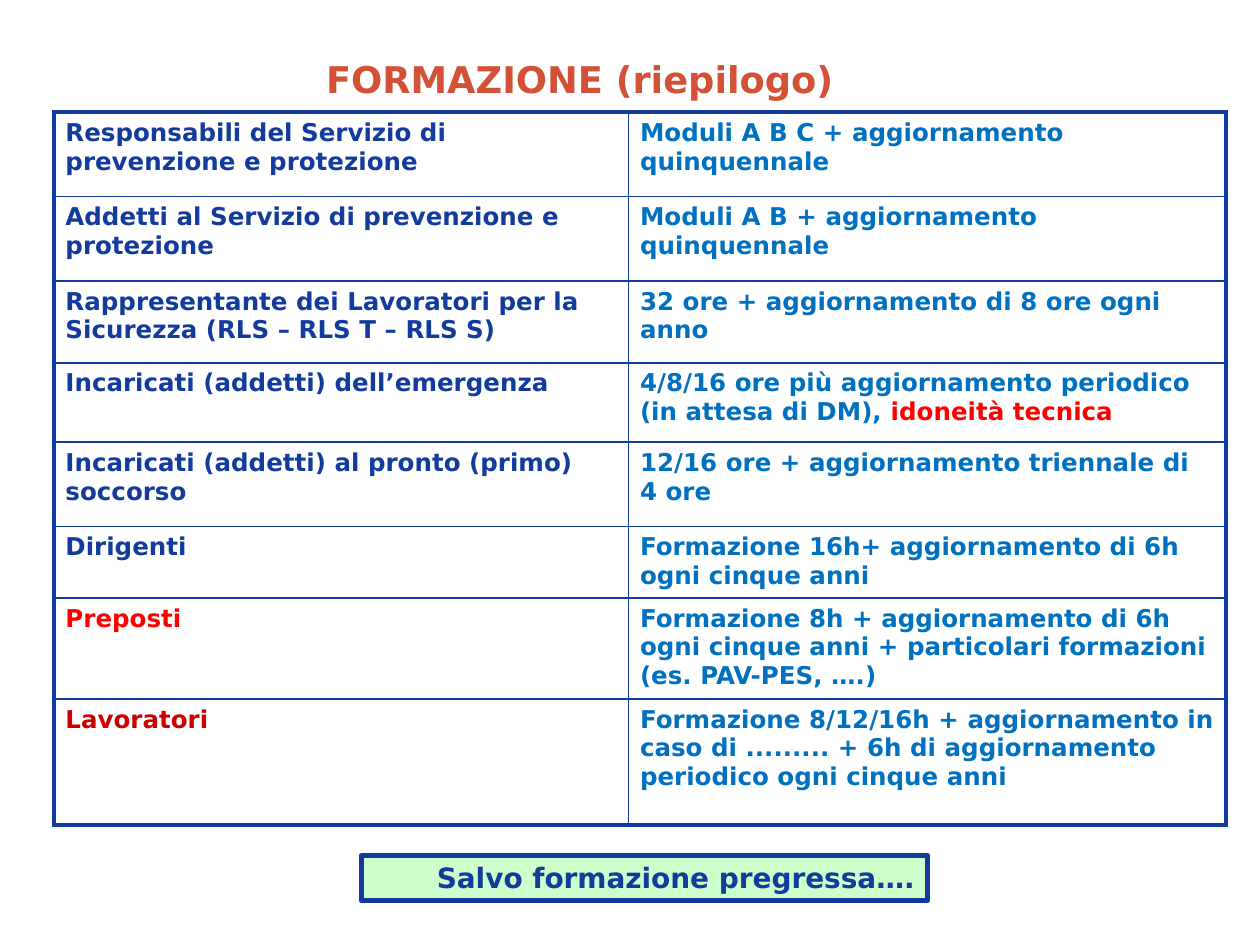
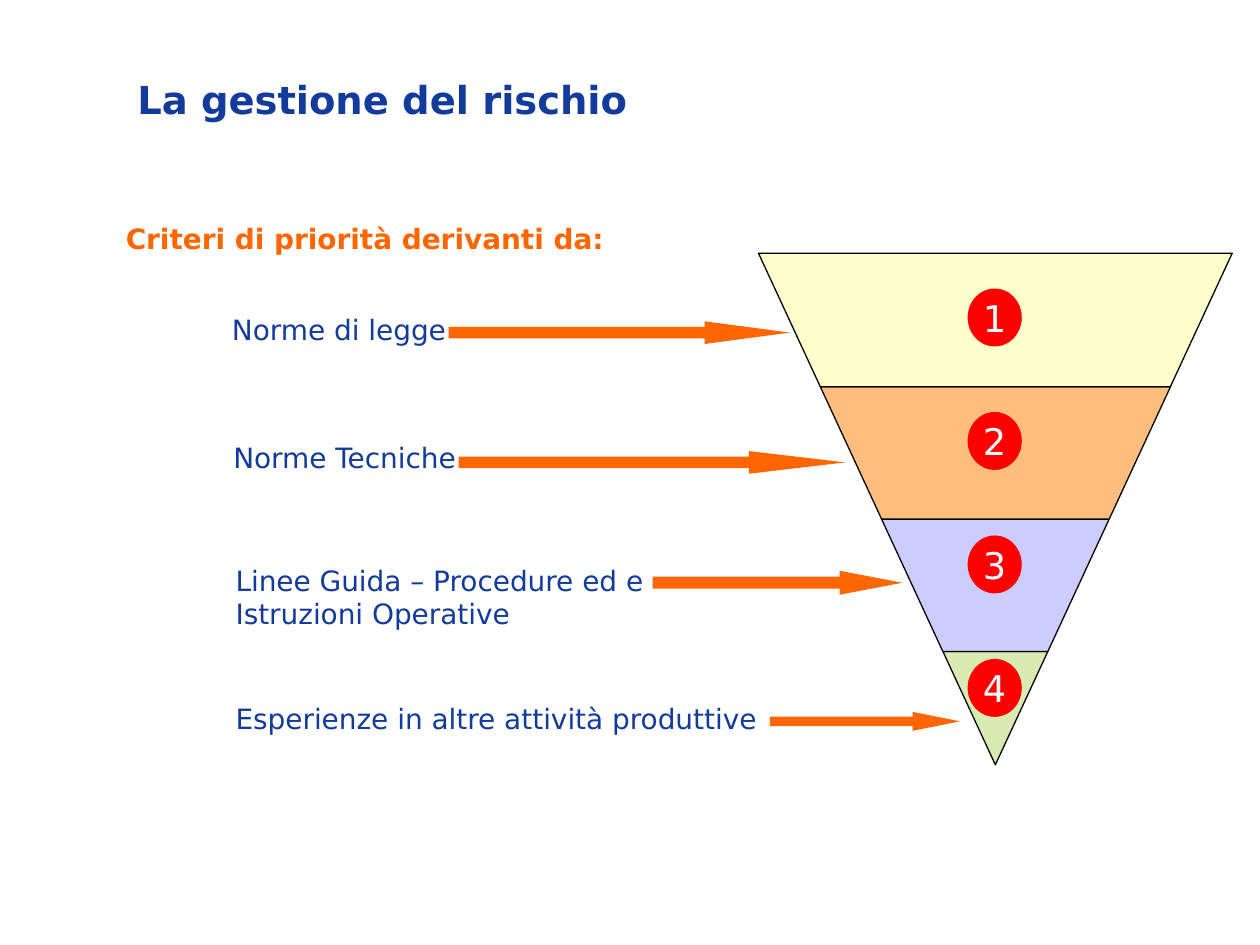
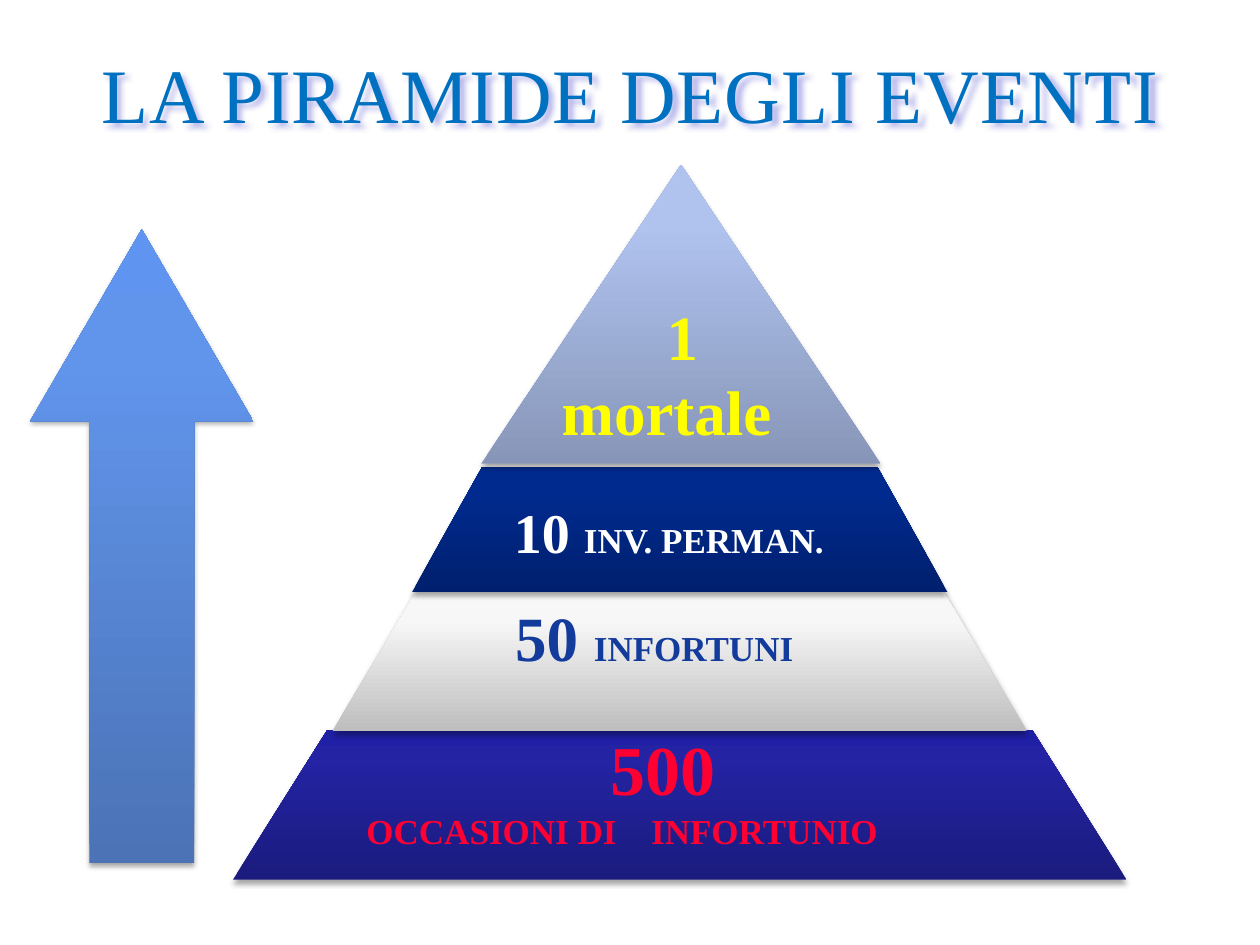
from dataclasses import dataclass
from typing import NamedTuple

from lxml.etree import SubElement
from pptx import Presentation
from pptx.dml.color import RGBColor
from pptx.enum.shapes import MSO_SHAPE
from pptx.enum.text import MSO_ANCHOR, PP_ALIGN
from pptx.oxml.ns import qn
from pptx.util import Emu, Pt

PX = 9144  # 100 px to the inch
SANS, SERIF = "DejaVu Sans", "Times New Roman"
NAVY, SKY, ORANGE = "133B9C", "0070C0", "FF6600"
RED, DARK_RED, WHITE, BLACK = "FF0000", "CC0000", "FFFFFF", "000000"
LEFT, CENTER = PP_ALIGN.LEFT, PP_ALIGN.CENTER
TOP, MIDDLE, BOTTOM = MSO_ANCHOR.TOP, MSO_ANCHOR.MIDDLE, MSO_ANCHOR.BOTTOM


class Box(NamedTuple):
    left: int
    top: int
    width: int
    height: int


class Insets(NamedTuple):
    left: int
    top: int
    right: int
    bottom: int


WIDE = Insets(10, 5, 10, 5)
SNUG = Insets(9, 4, 9, 4)
LABEL = Insets(6, 6, 10, 6)
BADGE = Insets(6, 6, 6, 6)


class Run(NamedTuple):
    """Text with what differs from the rest of its line."""
    text: str
    size: int | None = None
    color: str | None = None


@dataclass(frozen=True)
class Line:
    runs: str | tuple[Run, ...]
    size: int
    color: str = NAVY
    bold: bool = False
    font: str = SANS
    align: PP_ALIGN = LEFT
    indent: int = 0
    tab: int = 0


class Duty(NamedTuple):
    role: str
    training: str | tuple[Run, ...]
    height: int
    role_color: str = NAVY


class Priority(NamedTuple):
    label: str
    label_box: Box
    wraps: bool
    arrow: Box
    band_color: str


class Tier(NamedTuple):
    box: Box
    adjustments: tuple[float, ...]
    gradient: tuple[str, str, str]
    shape: MSO_SHAPE = MSO_SHAPE.TRAPEZOID


DUTIES = (
    Duty("Responsabili del Servizio di prevenzione e protezione",
         "Moduli A B C + aggiornamento quinquennale", 67),
    Duty("Addetti al Servizio di prevenzione e protezione",
         "Moduli A B + aggiornamento quinquennale", 67),
    Duty("Rappresentante dei Lavoratori per la Sicurezza (RLS – RLS T – RLS S)",
         "32 ore + aggiornamento di 8 ore ogni anno", 65),
    Duty("Incaricati (addetti) dell’emergenza",
         (Run("4/8/16 ore più aggiornamento periodico (in attesa di DM), "),
          Run("idoneità tecnica", color=RED)), 63),
    Duty("Incaricati (addetti) al pronto (primo) soccorso",
         "12/16 ore + aggiornamento triennale di 4 ore", 67),
    Duty("Dirigenti", "Formazione 16h+ aggiornamento di 6h ogni cinque anni", 51),
    Duty("Preposti",
         "Formazione 8h + aggiornamento di 6h ogni cinque anni"
         " + particolari formazioni (es. PAV-PES, ….)", 51, RED),
    Duty("Lavoratori",
         "Formazione 8/12/16h + aggiornamento in caso di ........."
         " + 6h di aggiornamento periodico ogni cinque anni", 100, DARK_RED),
)

PRIORITIES = (
    Priority("Norme di legge", Box(177, 242, 188, 38), False,
             Box(356, 255, 271, 18), "FFFFCC"),
    Priority("Norme Tecniche", Box(178, 344, 195, 38), False,
             Box(364, 358, 307, 18), "FFBE7D"),
    Priority("Linee Guida – Procedure ed e Istruzioni Operative",
             Box(181, 441, 434, 67), True, Box(518, 453, 198, 19), "CCCCFF"),
    Priority("Esperienze in altre attività produttive",
             Box(181, 551, 434, 39), True, Box(611, 565, 151, 15), "D8EBB3"),
)
BAND_EDGES = (201, 307, 412, 517, 607)
FUNNEL_CENTER, FUNNEL_HALF_WIDTH = 790, 188

TIERS = (
    Tier(Box(185, 579, 709, 119), (0.63,), ("1B1B7E", "2323A3", "2020A6")),
    Tier(Box(264, 470, 551, 110), (0.6,), ("BEBEBE", "F7F7F7", "F8F8F8")),
    Tier(Box(327, 371, 425, 99), (0.56,), ("00206E", "002A8E", "002A8F")),
    Tier(Box(382, 131, 317, 237), (0.67,), ("8796B8", "B0C3EF", "AFC3F1")),
)
RISING_ARROW = Tier(Box(24, 182, 177, 503), (0.47, 0.86),
                    ("4B73B6", "6195EC", "5F95F0"), MSO_SHAPE.UP_ARROW)


def px(length: float) -> Emu:
    return Emu(round(length * PX))


def place(box: Box) -> tuple[Emu, ...]:
    return tuple(px(length) for length in box)


def rgb(color: str) -> RGBColor:
    return RGBColor.from_string(color)


def write(frame, *lines: Line) -> None:
    for number, line in enumerate(lines):
        paragraph = frame.add_paragraph() if number else frame.paragraphs[0]
        paragraph.alignment = line.align
        properties = paragraph._p.get_or_add_pPr()
        if line.indent:
            properties.set("marL", str(px(line.indent)))
            properties.set("indent", "0")
        if line.tab:
            stops = SubElement(properties, qn("a:tabLst"))
            SubElement(stops, qn("a:tab"), pos=str(px(line.tab)), algn="l")
        font = paragraph.font
        font.name, font.size, font.bold = line.font, Pt(line.size), line.bold
        font.color.rgb = rgb(line.color)
        runs = (Run(line.runs),) if isinstance(line.runs, str) else line.runs
        for part in runs:
            run = paragraph.add_run()
            run.text = part.text
            if part.size:
                run.font.size = Pt(part.size)
            if part.color:
                run.font.color.rgb = rgb(part.color)


def fill_frame(shape, *lines: Line, insets: Insets = WIDE,
               anchor: MSO_ANCHOR = TOP, wrap: bool = True) -> None:
    frame = shape.text_frame
    frame.word_wrap, frame.vertical_anchor = wrap, anchor
    (frame.margin_left, frame.margin_top,
     frame.margin_right, frame.margin_bottom) = place(insets)
    write(frame, *lines)


def add_text(slide, box: Box, *lines: Line, **layout):
    shape = slide.shapes.add_textbox(*place(box))
    fill_frame(shape, *lines, **layout)
    return shape


def paint(shape, color: str, line: str | None = None, width: float = 0.75) -> None:
    shape.shadow.inherit = False
    shape.fill.solid()
    shape.fill.fore_color.rgb = rgb(color)
    if line:
        shape.line.color.rgb = rgb(line)
        shape.line.width = Pt(width)
    else:
        shape.line.fill.background()


def add_solid(slide, kind: MSO_SHAPE, box: Box, color: str,
              line: str | None = None, width: float = 0.75):
    shape = slide.shapes.add_shape(kind, *place(box))
    paint(shape, color, line, width)
    return shape


def cast_shadow(shape, color: str, opacity: int, blur: float,
                distance: float, angle: int) -> None:
    shape.shadow.inherit = False
    effects = shape._element.spPr.find(qn("a:effectLst"))
    shadow = SubElement(effects, qn("a:outerShdw"), blurRad=str(Pt(blur)),
                        dist=str(Pt(distance)), dir=str(angle * 60000),
                        algn="ctr", rotWithShape="0")
    tint = SubElement(shadow, qn("a:srgbClr"), val=color)
    SubElement(tint, qn("a:alpha"), val=str(opacity * 1000))


def add_tier(slide, tier: Tier) -> None:
    shape = slide.shapes.add_shape(tier.shape, *place(tier.box))
    for number, value in enumerate(tier.adjustments):
        shape.adjustments[number] = value
    shape.fill.gradient()
    shape.fill.gradient_angle = 90
    stops = shape._element.spPr.find(qn("a:gradFill")).find(qn("a:gsLst"))
    stops.clear()
    for percent, color in zip((0, 80, 100), tier.gradient):
        stop = SubElement(stops, qn("a:gs"), pos=str(percent * 1000))
        SubElement(stop, qn("a:srgbClr"), val=color)
    shape.line.fill.background()
    cast_shadow(shape, BLACK, 35, 3.1, 1.8, 90)


def set_borders(cell, thick_sides: set[str]) -> None:
    properties = cell._tc.get_or_add_tcPr()
    for side in "LRTB":
        width = Pt(2.25 if side in thick_sides else 1)
        line = SubElement(properties, qn(f"a:ln{side}"), w=str(width))
        SubElement(SubElement(line, qn("a:solidFill")), qn("a:srgbClr"), val=NAVY)


def build_training_summary(slide) -> None:
    add_text(slide, Box(0, 13, 925, 72),
             Line("FORMAZIONE (riepilogo)", 21, "D35137", True, align=CENTER),
             insets=Insets(5, 5, 10, 5), anchor=BOTTOM)

    height = sum(duty.height for duty in DUTIES)
    table = slide.shapes.add_table(
        len(DUTIES), 2, *place(Box(43, 89, 930, height))).table
    table.first_row = table.horz_banding = False
    for column, width in zip(table.columns, (456, 474)):
        column.width = px(width)
    for number, duty in enumerate(DUTIES):
        table.rows[number].height = px(duty.height)
        outer = {"T"} if number == 0 else {"B"} if duty is DUTIES[-1] else set()
        entries = ((duty.role, duty.role_color, "L"), (duty.training, SKY, "R"))
        for cell, (text, color, side) in zip(table.rows[number].cells, entries):
            (cell.margin_left, cell.margin_top,
             cell.margin_right, cell.margin_bottom) = place(Insets(9, 5, 9, 5))
            set_borders(cell, outer | {side})
            cell.fill.background()
            write(cell.text_frame, Line(text, 14, color, True))

    exemption = add_solid(slide, MSO_SHAPE.RECTANGLE, Box(287, 679, 449, 36),
                          "CCFFCC", NAVY, 3)
    fill_frame(exemption, Line("Salvo formazione pregressa….", 16, bold=True,
                               align=CENTER, indent=50), insets=SNUG)


def funnel_half_width(y: int) -> float:
    top, tip = BAND_EDGES[0], BAND_EDGES[-1]
    return FUNNEL_HALF_WIDTH * (tip - y) / (tip - top)


def add_band(slide, top: int, bottom: int, color: str) -> None:
    upper, lower = funnel_half_width(top), funnel_half_width(bottom)
    corners = [(upper, top), (lower, bottom), (-lower, bottom)]
    outline = slide.shapes.build_freeform(
        px(FUNNEL_CENTER - upper), px(top), scale=1.0)
    outline.add_line_segments(
        [(px(FUNNEL_CENTER + x), px(y)) for x, y in corners], close=True)
    paint(outline.convert_to_shape(), color, BLACK)


def build_risk_management(slide) -> None:
    add_text(slide, Box(100, 56, 900, 46),
             Line("La gestione del rischio", 22, bold=True),
             insets=SNUG, anchor=MIDDLE)
    add_text(slide, Box(90, 170, 416, 38),
             Line("Criteri di priorità derivanti da:", 16, ORANGE, True),
             anchor=MIDDLE)

    bands = list(zip(BAND_EDGES, BAND_EDGES[1:], PRIORITIES))
    for top, bottom, priority in reversed(bands):
        add_band(slide, top, bottom, priority.band_color)
    for number, priority in enumerate(PRIORITIES):
        add_text(slide, priority.label_box,
                 Line(priority.label, 16, align=LEFT if priority.wraps else CENTER),
                 insets=LABEL, wrap=priority.wraps)
        arrow = add_solid(slide, MSO_SHAPE.RIGHT_ARROW, priority.arrow, ORANGE)
        arrow.adjustments[1] = priority.arrow.width / priority.arrow.height / 4
        badge = add_solid(slide, MSO_SHAPE.OVAL,
                          Box(768, 229 + 98 * number, 43, 46), RED)
        fill_frame(badge, Line(str(number + 1), 21, WHITE, align=CENTER),
                   insets=BADGE, anchor=MIDDLE, wrap=False)


def build_event_pyramid(slide) -> None:
    title = add_text(slide, Box(17, 32, 967, 84),
                     Line("LA PIRAMIDE DEGLI EVENTI", 44, SKY,
                          font=SERIF, align=CENTER))
    title_run = title.text_frame.paragraphs[0].runs[0]
    title_run._r.get_or_add_rPr().set("spc", "50")
    cast_shadow(title, "5050D0", 40, 3, 2.5, 45)

    for tier in TIERS:
        add_tier(slide, tier)
    crimson, yellow = "FF0033", "FFFF00"
    add_text(slide, Box(281, 571, 490, 111),
             Line("500", 40, crimson, True, SERIF, CENTER),
             Line("OCCASIONI DI\tINFORTUNIO", 20, crimson, True, SERIF, tab=226))
    add_text(slide, Box(374, 470, 343, 70),
             Line((Run("50 ", 36), Run("INFORTUNI")), 20, NAVY, True, SERIF,
                  indent=25))
    add_text(slide, Box(398, 390, 293, 63),
             Line((Run("10 ", 32), Run("INV. PERMAN.")), 20, WHITE, True, SERIF))
    add_text(slide, Box(413, 231, 232, 131),
             Line("1", 36, yellow, True, SERIF, CENTER, indent=25),
             Line("mortale", 36, yellow, True, SERIF, CENTER))
    add_tier(slide, RISING_ARROW)


def main() -> None:
    deck = Presentation()
    deck.slide_width, deck.slide_height = px(1000), px(750)
    blank = deck.slide_layouts[6]
    for build in (build_training_summary, build_risk_management,
                  build_event_pyramid):
        build(deck.slides.add_slide(blank))
    deck.save("out.pptx")


if __name__ == "__main__":
    main()
